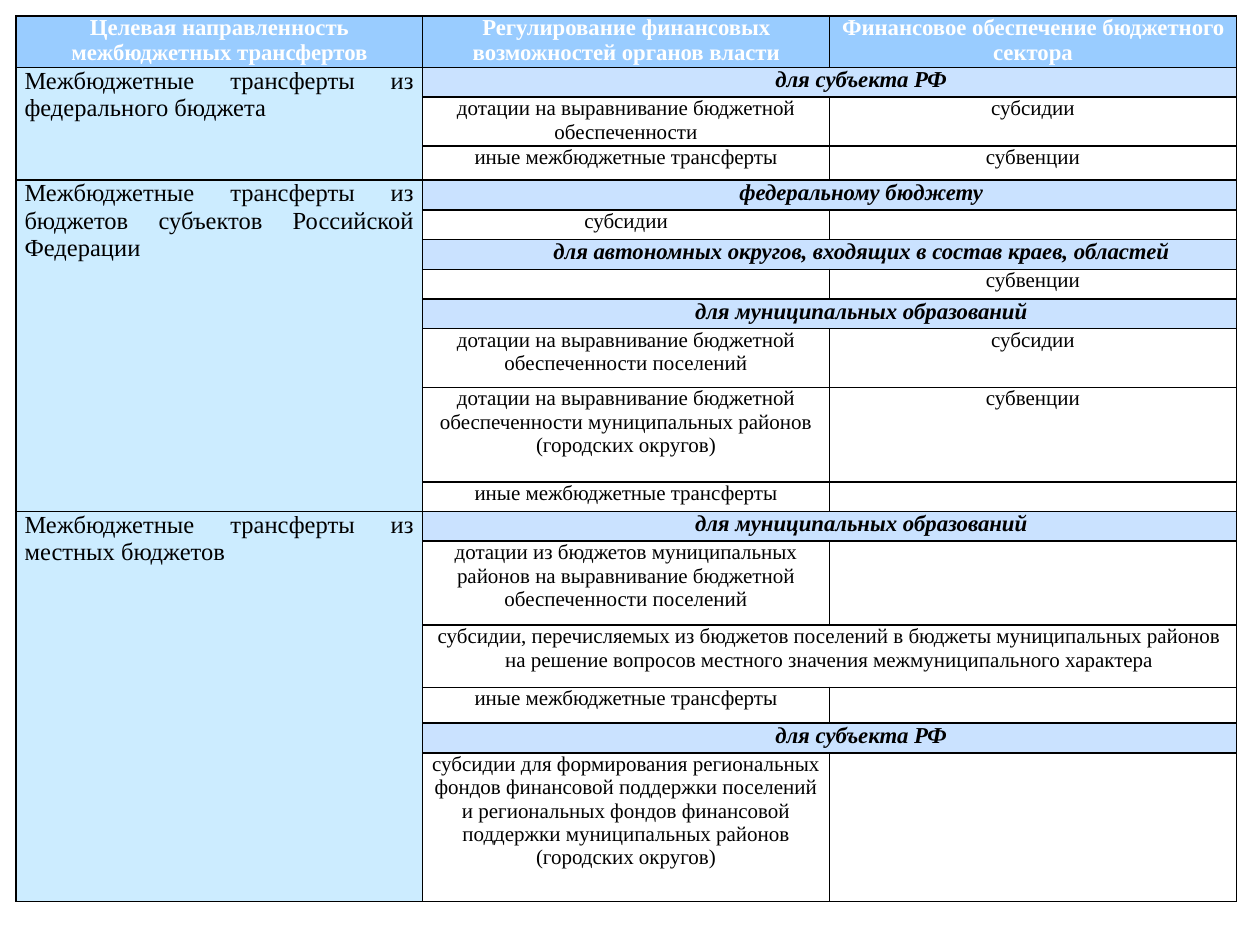
from dataclasses import dataclass

from lxml import etree
from pptx import Presentation
from pptx.dml.color import RGBColor
from pptx.enum.text import PP_ALIGN
from pptx.oxml.ns import qn
from pptx.util import Pt

CENTER = PP_ALIGN.CENTER
JUSTIFY = PP_ALIGN.JUSTIFY
BORDER_TAGS = ("a:lnL", "a:lnR", "a:lnT", "a:lnB")


@dataclass(frozen=True)
class Theme:
    """Colours, font and type sizes of the slide."""

    font: str = "Times New Roman"
    header_fill: str = "99CCFF"
    source_fill: str = "CCECFF"
    recipient_fill: str = "CAE2FF"
    body_fill: str = "FFFFFF"
    header_text: str = "FFFFFF"
    text: str = "000000"
    border: str = "000000"
    heading_size: int = 13
    source_size: int = 14
    body_size: int = 12


THEME = Theme()
COLUMN_WIDTH = 232.5
HEADER_HEIGHT = 29.5
LINE_HEIGHT = 17
HEADERS = (
    "Целевая направленность межбюджетных трансфертов",
    "Регулирование финансовых возможностей органов власти",
    "Финансовое обеспечение бюджетного сектора",
)
OTHER = "иные межбюджетные трансферты"
LEVELLING = "дотации на выравнивание бюджетной обеспеченности"
REGION = "для субъекта РФ"
MUNICIPAL = "для муниципальных образований"

# Each section: source budget, then recipients with (height, regulation, provision) rows.
SECTIONS = (
    ("Межбюджетные трансферты из федерального бюджета", (
        (REGION, ((28, LEVELLING, "субсидии"), (19.5, OTHER, "субвенции"))),
    )),
    ("Межбюджетные трансферты из бюджетов субъектов Российской Федерации", (
        ("федеральному бюджету", ((LINE_HEIGHT, "субсидии", ""),)),
        ("для автономных округов, входящих в состав краев, областей",
         ((LINE_HEIGHT, "", "субвенции"),)),
        (MUNICIPAL, (
            (33.5, f"{LEVELLING} поселений", "субсидии"),
            (54, f"{LEVELLING} муниципальных районов (городских округов)", "субвенции"),
            (LINE_HEIGHT, OTHER, ""),
        )),
    )),
    ("Межбюджетные трансферты из местных бюджетов", (
        (MUNICIPAL, (
            (48, "дотации из бюджетов муниципальных районов на выравнивание "
                 "бюджетной обеспеченности поселений", ""),
            (35.5, "субсидии, перечисляемых из бюджетов поселений в бюджеты "
                   "муниципальных районов на решение вопросов местного значения "
                   "межмуниципального характера", None),
            (20.5, OTHER, ""),
        )),
        (REGION, (
            (85, "субсидии для формирования региональных фондов финансовой "
                 "поддержки поселений и региональных фондов финансовой поддержки "
                 "муниципальных районов (городских округов)", ""),
        )),
    )),
)


def set_borders(cell):
    """Draw a thin solid line on every side of a cell."""
    properties = cell._tc.get_or_add_tcPr()
    for position, tag in enumerate(BORDER_TAGS):
        line = etree.Element(qn(tag), w=str(Pt(1)))
        fill = etree.SubElement(line, qn("a:solidFill"))
        etree.SubElement(fill, qn("a:srgbClr"), val=THEME.border)
        properties.insert(position, line)


def style_cell(cell, fill):
    """Give a cell its fill, margins, borders and empty-line height."""
    cell.margin_left = cell.margin_right = Pt(5)
    cell.margin_top = cell.margin_bottom = 0
    cell.fill.solid()
    cell.fill.fore_color.rgb = RGBColor.from_string(fill)
    set_borders(cell)
    if not cell.text_frame.text:
        paragraph = cell.text_frame.paragraphs[0]
        etree.SubElement(paragraph._p, qn("a:endParaRPr"), sz=str(THEME.body_size * 100))


def write_cell(cell, text, size, color=THEME.text, alignment=CENTER, bold=False, italic=False):
    """Write one formatted paragraph into a cell."""
    cell.text_frame.text = text
    paragraph = cell.text_frame.paragraphs[0]
    paragraph.alignment = alignment
    for run in paragraph.runs:
        font = run.font
        font.name, font.size = THEME.font, Pt(size)
        font.bold, font.italic = bold, italic
        font.color.rgb = RGBColor.from_string(color)
    return paragraph


def fill_header(table):
    """Fill the header row."""
    for cell, text in zip(table.rows[0].cells, HEADERS):
        write_cell(cell, text, THEME.heading_size, THEME.header_text, bold=True)
        style_cell(cell, THEME.header_fill)


def fill_recipient(table, row, text):
    """Fill a merged row that names the receiving budget."""
    first, last = table.cell(row, 1), table.cell(row, 2)
    first.merge(last)
    paragraph = write_cell(first, text, THEME.heading_size, bold=True, italic=True)
    properties = paragraph._p.get_or_add_pPr()
    properties.set("marL", "0")
    properties.set("indent", str(Pt(36)))
    for cell in (first, last):
        style_cell(cell, THEME.recipient_fill)


def fill_transfer(table, row, regulation, provision):
    """Fill a row of transfers, merged when it has no second part."""
    first, last = table.cell(row, 1), table.cell(row, 2)
    if provision is None:
        first.merge(last)
    for cell, text in ((first, regulation), (last, provision)):
        if text:
            write_cell(cell, text, THEME.body_size)
        style_cell(cell, THEME.body_fill)


def fill_section(table, row, source, recipients):
    """Fill one section and return the row after it."""
    start = row
    for recipient, transfers in recipients:
        fill_recipient(table, row, recipient)
        table.rows[row].height = Pt(LINE_HEIGHT)
        row += 1
        for height, regulation, provision in transfers:
            fill_transfer(table, row, regulation, provision)
            table.rows[row].height = Pt(height)
            row += 1
    table.cell(start, 0).merge(table.cell(row - 1, 0))
    write_cell(table.cell(start, 0), source, THEME.source_size, alignment=JUSTIFY)
    for index in range(start, row):
        style_cell(table.cell(index, 0), THEME.source_fill)
    return row


def add_transfer_table(slide):
    """Add the table of intergovernmental transfers."""
    row_count = 1 + sum(1 + len(transfers) for _, recipients in SECTIONS
                        for _, transfers in recipients)
    frame = slide.shapes.add_table(row_count, len(HEADERS), Pt(9), Pt(9),
                                   Pt(COLUMN_WIDTH * len(HEADERS)), Pt(507))
    table = frame.table
    table.first_row = table.horz_banding = False
    for column in table.columns:
        column.width = Pt(COLUMN_WIDTH)
    table.rows[0].height = Pt(HEADER_HEIGHT)
    fill_header(table)
    row = 1
    for source, recipients in SECTIONS:
        row = fill_section(table, row, source, recipients)


def main():
    """Build and save the slide."""
    presentation = Presentation()
    presentation.slide_width, presentation.slide_height = Pt(720), Pt(540)
    slide = presentation.slides.add_slide(presentation.slide_layouts[6])
    add_transfer_table(slide)
    presentation.save("out.pptx")


if __name__ == "__main__":
    main()
